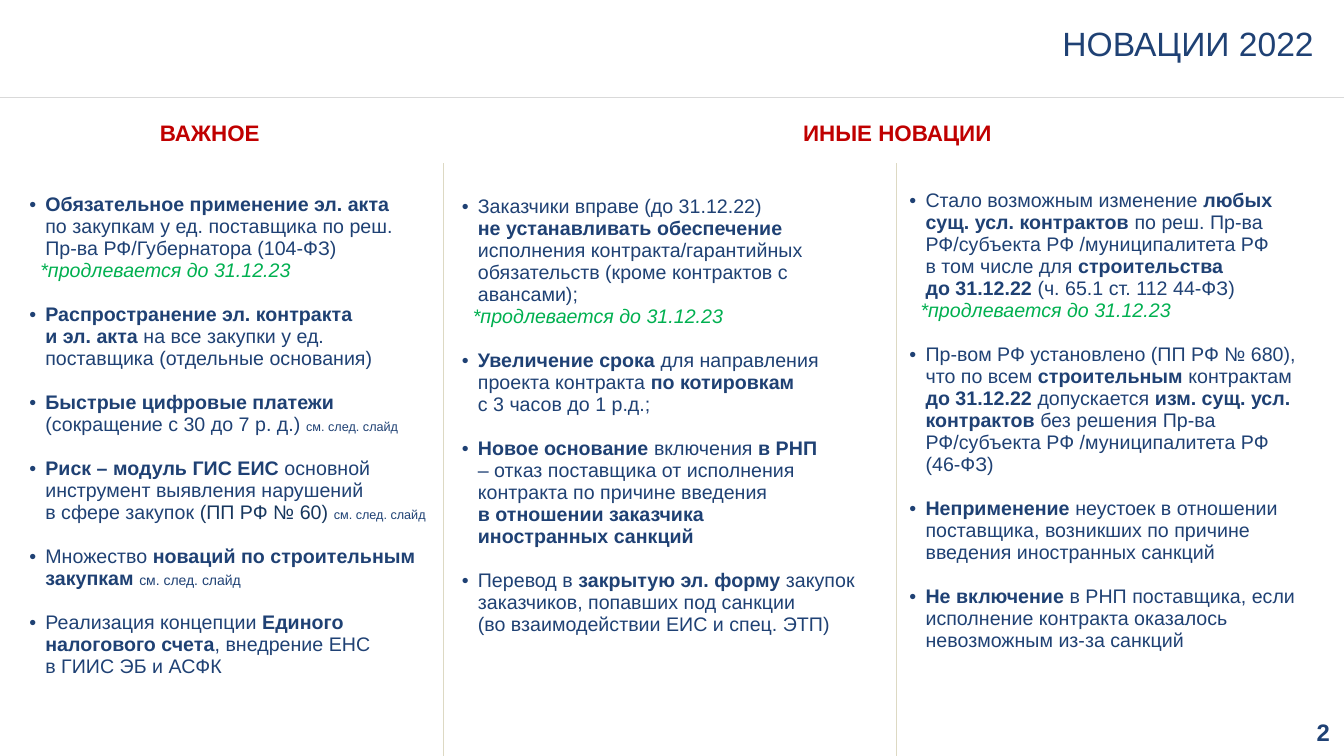
from dataclasses import dataclass
from typing import Optional

from lxml import etree
from pptx import Presentation
from pptx.dml.color import RGBColor
from pptx.enum.shapes import MSO_CONNECTOR
from pptx.enum.text import MSO_ANCHOR, PP_ALIGN
from pptx.oxml.ns import qn
from pptx.util import Inches, Pt

LEFT, CENTER, RIGHT = PP_ALIGN.LEFT, PP_ALIGN.CENTER, PP_ALIGN.RIGHT
TOP, MIDDLE = MSO_ANCHOR.TOP, MSO_ANCHOR.MIDDLE
STRAIGHT = MSO_CONNECTOR.STRAIGHT

NAVY = RGBColor(0x1F, 0x41, 0x74)
DARK_BLUE = RGBColor(0x17, 0x37, 0x5E)
RED = RGBColor(0xC0, 0x00, 0x00)
GREEN = RGBColor(0x00, 0xB0, 0x50)
GREY = RGBColor(0xD9, 0xD9, 0xD9)
BEIGE = RGBColor(0xDD, 0xD9, 0xC3)


@dataclass
class Run:
    text: str
    bold: Optional[bool] = None
    size: Optional[int] = None
    color: Optional[RGBColor] = None


def bold(text):
    return Run(text, bold=True)


def see_next(size):
    return Run("см. след. слайд", size=size)


EXTENDED = "*продлевается до 31.12.23"

# An item is a list of runs; the bare string EXTENDED is the green remark under an item.
IMPORTANT = [
    [bold("Обязательное применение эл. акта \n"),
     Run("по закупкам у ед. поставщика по реш. Пр-ва РФ/Губернатора (104-ФЗ)")],
    EXTENDED,
    [bold("Распространение эл. контракта \nи эл. акта"),
     Run(" на все закупки у ед. поставщика (отдельные основания)")],
    [bold("Быстрые цифровые платежи "), Run("(сокращение с 30 до 7 р. д.) "), see_next(9)],
    [bold("Риск – модуль ГИС ЕИС"),
     Run(" основной инструмент выявления нарушений \nв сфере закупок "),
     Run("(ПП РФ № 60) ", color=DARK_BLUE), see_next(9)],
    [Run("Множество "), bold("новаций по строительным закупкам "), see_next(10)],
    [Run("Реализация концепции "), bold("Единого налогового счета"),
     Run(", внедрение ЕНС \nв ГИИС ЭБ и АСФК")],
]
CUSTOMERS = [
    [Run("Заказчики вправе (до 31.12.22) \n"), bold("не устанавливать обеспечение"),
     Run(" исполнения контракта/гарантийных обязательств (кроме контрактов с авансами);")],
    EXTENDED,
    [bold("Увеличение срока "), Run("для направления проекта контракта "),
     bold("по котировкам \n"), Run("с 3 часов до 1 р.д.;")],
    [bold("Новое основание "), Run("включения "), bold("в РНП \n"),
     Run("– отказ поставщика от исполнения контракта по причине введения \n"),
     bold("в отношении заказчика \nиностранных санкций")],
    [Run("Перевод в "), bold("закрытую эл. форму"),
     Run(" закупок заказчиков, попавших под санкции \n(во взаимодействии ЕИС и спец. ЭТП)")],
]
CONTRACTS = [
    [Run("Стало возможным изменение "), bold("любых сущ. усл. контрактов "),
     Run("по реш. Пр-ва РФ/субъекта РФ /муниципалитета РФ \nв том числе для "),
     bold("строительства\nдо 31.12.22 "), Run("(ч. 65.1 ст. 112 44-ФЗ)")],
    EXTENDED,
    [Run("Пр-вом РФ установлено (ПП РФ № 680), что по всем "), bold("строительным"),
     Run(" контрактам \n"), bold("до 31.12.22 "), Run("допускается "),
     bold("изм. сущ. усл. контрактов "),
     Run("без решения Пр-ва РФ/субъекта РФ /муниципалитета РФ \n(46-ФЗ)")],
    [bold("Неприменение "),
     Run("неустоек в отношении поставщика, возникших по причине введения иностранных санкций")],
    [bold("Не включение "),
     Run("в РНП поставщика, если исполнение контракта оказалось невозможным из-за санкций")],
]


class SlideBuilder:
    font_name = "Arial"
    body_size = 14
    item_gap = Pt(15.7)
    bullet_indent = Inches(0.16)
    remark_indent = Inches(0.11)

    def __init__(self, slide):
        self.slide = slide

    def set_font(self, paragraph, size, color, is_bold=False, italic=False):
        font = paragraph.font
        font.name, font.size = self.font_name, Pt(size)
        font.bold, font.italic = is_bold, italic
        font.color.rgb = color

    def write_line(self, shape, text, size, color, align, is_bold=False, anchor=TOP):
        text_frame = shape.text_frame
        text_frame.word_wrap = True
        text_frame.vertical_anchor = anchor
        paragraph = text_frame.paragraphs[0]
        paragraph.text = text
        paragraph.alignment = align
        self.set_font(paragraph, size, color, is_bold)

    def title(self, text, left, top, width, height):
        shape = self.slide.shapes.title
        shape.left, shape.top = Inches(left), Inches(top)
        shape.width, shape.height = Inches(width), Inches(height)
        self.write_line(shape, text, 24, NAVY, RIGHT, anchor=MIDDLE)

    def label(self, text, left, top, width, height, size, color, align, inset=(0, 0)):
        shape = self.slide.shapes.add_textbox(
            Inches(left), Inches(top), Inches(width), Inches(height))
        text_frame = shape.text_frame
        text_frame.margin_left = text_frame.margin_right = Inches(inset[0])
        text_frame.margin_top = text_frame.margin_bottom = Inches(inset[1])
        self.write_line(shape, text, size, color, align, is_bold=True)

    def heading(self, text, left):
        self.label(text, left, 1.16, 3.88, 0.31, 16, RED, CENTER, inset=(0.04, 0.02))

    def line(self, start, end, color, width):
        connector = self.slide.shapes.add_connector(
            STRAIGHT, *(Inches(value) for value in start + end))
        connector.line.color.rgb = color
        connector.line.width = Pt(width)
        etree.SubElement(connector._element.spPr, qn("a:effectLst"))

    def indent(self, paragraph, left, first=0, bullet=None):
        properties = paragraph._p.get_or_add_pPr()
        properties.set("marL", str(left))
        properties.set("indent", str(first))
        if bullet:
            etree.SubElement(properties, qn("a:buFont")).set("typeface", self.font_name)
            etree.SubElement(properties, qn("a:buChar")).set("char", bullet)

    def add_run(self, paragraph, item_run):
        """Add one run, turning each newline into a line break."""
        for number, text in enumerate(item_run.text.split("\n")):
            if number:
                paragraph.add_line_break()
            if not text:
                continue
            run = paragraph.add_run()
            run.text = text
            if item_run.bold is not None:
                run.font.bold = item_run.bold
            if item_run.size:
                run.font.size = Pt(item_run.size)
            if item_run.color:
                run.font.color.rgb = item_run.color

    def column(self, items, left, top, width, row_heights, margin_top=0.05):
        """Add a one-column table: the items in the first row, an empty row below."""
        table = self.slide.shapes.add_table(
            len(row_heights), 1, Inches(left), Inches(top),
            Inches(width), Inches(sum(row_heights))).table
        table.first_row = table.horz_banding = False
        for number, height in enumerate(row_heights):
            table.rows[number].height = Inches(height)
            table.cell(number, 0).fill.background()
        cell = table.cell(0, 0)
        cell.margin_top = Inches(margin_top)
        text_frame = cell.text_frame
        for number, item in enumerate(items):
            paragraph = text_frame.add_paragraph() if number else text_frame.paragraphs[0]
            paragraph.alignment = LEFT
            if item == EXTENDED:
                self.indent(paragraph, self.remark_indent)
                self.set_font(paragraph, self.body_size, GREEN, italic=True)
                self.add_run(paragraph, Run(item))
                continue
            self.indent(paragraph, self.bullet_indent, -self.bullet_indent, "•")
            if number:
                paragraph.space_before = self.item_gap
            self.set_font(paragraph, self.body_size, NAVY)
            for item_run in item:
                self.add_run(paragraph, item_run)


def main():
    presentation = Presentation()
    presentation.slide_width, presentation.slide_height = Inches(13.33), Inches(7.5)
    title_only = presentation.slide_layouts[5]
    builder = SlideBuilder(presentation.slides.add_slide(title_only))

    builder.title("НОВАЦИИ 2022", 8.47, 0.18, 4.66, 0.5)
    builder.line((0, 0.97), (13.33, 0.97), GREY, 1)
    builder.heading("ВАЖНОЕ", 0.14)
    builder.heading("ИНЫЕ НОВАЦИИ", 6.96)
    builder.column(IMPORTANT, 0.19, 1.65, 4.15, (4.97, 0.32), margin_top=0.27)
    builder.column(CUSTOMERS, 4.48, 1.67, 4.41, (5.4, 0.33), margin_top=0.27)
    builder.column(CONTRACTS, 8.92, 1.83, 4.26, (5.1, 0.34))
    for divider in (4.4, 8.89):
        builder.line((divider, 1.62), (divider, 7.5), BEIGE, 0.75)
    builder.label("2", 12.78, 7.12, 0.41, 0.29, 17, NAVY, RIGHT)

    presentation.save("out.pptx")


if __name__ == "__main__":
    main()
